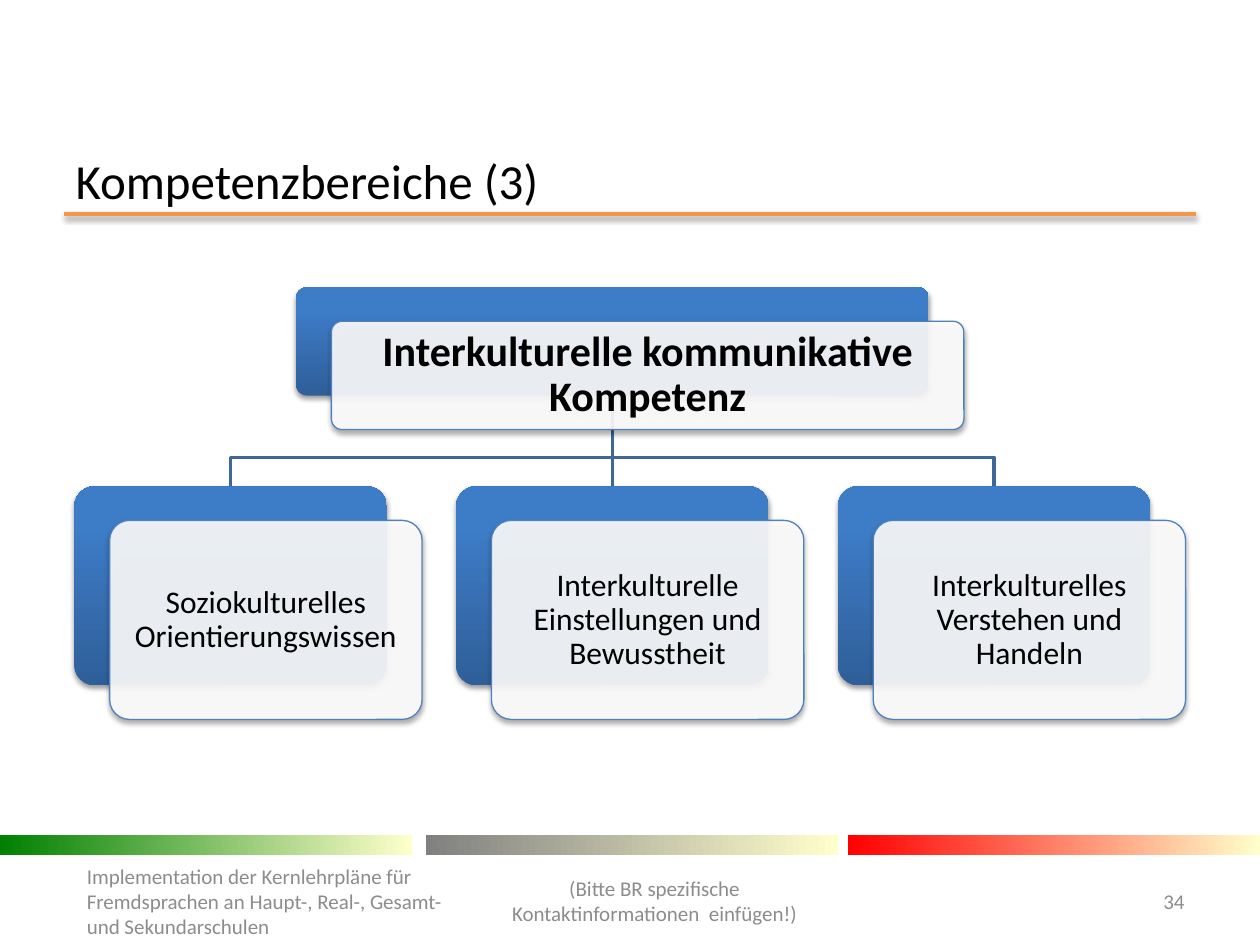
from dataclasses import dataclass

from lxml import etree
from pptx import Presentation
from pptx.dml.color import RGBColor
from pptx.enum.shapes import MSO_CONNECTOR, MSO_SHAPE
from pptx.enum.text import MSO_ANCHOR, MSO_AUTO_SIZE, PP_ALIGN
from pptx.oxml.ns import qn
from pptx.util import Inches, Pt

LEFT, CENTER, RIGHT = PP_ALIGN.LEFT, PP_ALIGN.CENTER, PP_ALIGN.RIGHT
MIDDLE = MSO_ANCHOR.MIDDLE
RECT, ROUNDED = MSO_SHAPE.RECTANGLE, MSO_SHAPE.ROUNDED_RECTANGLE
STRAIGHT = MSO_CONNECTOR.STRAIGHT
TITLE_ONLY = 5


@dataclass(frozen=True)
class Theme:
    font: str = "Calibri"
    text: str = "000000"
    muted: str = "8C8C8C"
    rule: str = "F79646"
    branch: str = "3F6797"
    card_line: str = "4F81BD"
    card_fill: str = "FFFFFF"
    card_opacity: int = 90
    back_bottom: str = "2F5F99"
    back_top: str = "3D7CC7"
    band_end: str = "FFFFCC"
    bands: tuple = ("008000", "808080", "FF0000")
    title_size: int = 28
    root_size: int = 24
    area_size: int = 18
    footer_size: int = 12


@dataclass(frozen=True)
class Box:
    left: float
    top: float
    width: float
    height: float

    def emu(self) -> tuple:
        return tuple(Inches(v) for v in (self.left, self.top, self.width, self.height))

    def shifted(self, dx: float, dy: float) -> "Box":
        return Box(self.left + dx, self.top + dy, self.width, self.height)

    @property
    def center(self) -> float:
        return self.left + self.width / 2

    @property
    def bottom(self) -> float:
        return self.top + self.height


@dataclass(frozen=True)
class Card:
    text: str
    box: Box
    size: int
    inset: float
    bold: bool = False


@dataclass(frozen=True)
class Footer:
    text: str
    box: Box
    align: PP_ALIGN


THEME = Theme()
CARD_OFFSET = (0.28, 0.27)
AREA_LEFT, AREA_TOP, AREA_STEP = 0.59, 3.86, 3.03
JUNCTION_Y = 3.63
BAND_LEFTS = (0, 3.38, 6.73)

ROOT = Card("Interkulturelle kommunikative Kompetenz",
            Box(2.35, 2.28, 5.02, 0.86), THEME.root_size, 0.1, True)
AREAS = [
    Card(text, Box(AREA_LEFT + i * AREA_STEP, AREA_TOP, 2.48, 1.58), THEME.area_size, 0.07)
    for i, text in enumerate((
        "Soziokulturelles Orientierungswissen",
        "Interkulturelle Einstellungen und Bewusstheit",
        "Interkulturelles Verstehen und Handeln",
    ))
]
FOOTERS = (
    Footer("Implementation der Kernlehrpläne für Fremdsprachen an Haupt-, Real-, "
           "Gesamt- und Sekundarschulen", Box(0.59, 6.81, 3.15, 0.68), LEFT),
    Footer("(Bitte BR spezifische Kontaktinformationen  einfügen!)",
           Box(3.74, 6.79, 2.91, 0.71), CENTER),
    Footer("34", Box(8.86, 6.95, 0.64, 0.4), RIGHT),
)


def rgb(color: str) -> RGBColor:
    return RGBColor.from_string(color)


def write(frame, text: str, size: int, color: str, align, bold=False, spacing=1.0, **margins) -> None:
    frame.text = text
    paragraph = frame.paragraphs[0]
    formats = (
        (frame, {"word_wrap": True, "auto_size": MSO_AUTO_SIZE.NONE,
                 "vertical_anchor": MIDDLE, **margins}),
        (paragraph, {"alignment": align, "line_spacing": spacing}),
        (paragraph.runs[0].font, {"name": THEME.font, "size": Pt(size), "bold": bold}),
    )
    for target, values in formats:
        for name, value in values.items():
            setattr(target, name, value)
    paragraph.runs[0].font.color.rgb = rgb(color)


def set_line(line, color: str, width: float) -> None:
    line.color.rgb = rgb(color)
    line.width = Pt(width)


def set_gradient(fill, start: str, end: str, angle: int, end_position: float = 1.0) -> None:
    fill.gradient()
    fill.gradient_angle = angle
    for stop, color, position in zip(fill.gradient_stops, (start, end), (0.0, end_position)):
        stop.color.rgb = rgb(color)
        stop.position = position


def set_effects(shape, opacity: int = 0, distance: float = 1.6) -> None:
    """Replace inherited effects with a downward shadow, or with none at zero opacity."""
    properties = shape._element.spPr
    for old in properties.findall(qn("a:effectLst")):
        properties.remove(old)
    effects = etree.SubElement(properties, qn("a:effectLst"))
    if opacity:
        shadow = etree.SubElement(effects, qn("a:outerShdw"), blurRad=str(Pt(3.1)),
                                  dist=str(Pt(distance)), dir="5400000", rotWithShape="0")
        color = etree.SubElement(shadow, qn("a:srgbClr"), val="000000")
        etree.SubElement(color, qn("a:alpha"), val=str(opacity * 1000))


def add_straight(shapes, start: tuple, end: tuple, color: str):
    connector = shapes.add_connector(STRAIGHT, *(Inches(v) for v in start + end))
    set_line(connector.line, color, 2)
    set_effects(connector)
    return connector


def add_branch(shapes, parent: Box, child: Box) -> None:
    start, end = (parent.center, parent.bottom), (child.center, child.top)
    if abs(start[0] - end[0]) < 0.05:
        add_straight(shapes, start, (start[0], end[1]), THEME.branch)
        return
    points = [(Inches(x), Inches(y)) for x, y in
              (start, (start[0], JUNCTION_Y), (end[0], JUNCTION_Y), end)]
    builder = shapes.build_freeform(*points[0])
    builder.add_line_segments(points[1:], close=False)
    branch = builder.convert_to_shape()
    branch.fill.background()
    set_line(branch.line, THEME.branch, 2)
    set_effects(branch)


def add_card(shapes, card: Card) -> None:
    back = shapes.add_shape(ROUNDED, *card.box.emu())
    set_gradient(back.fill, THEME.back_bottom, THEME.back_top, 90, 0.8)
    back.line.fill.background()
    set_effects(back, 38)

    front = shapes.add_shape(ROUNDED, *card.box.shifted(*CARD_OFFSET).emu())
    front.fill.solid()
    front.fill.fore_color.rgb = rgb(THEME.card_fill)
    fill_color = front._element.spPr.find(qn("a:solidFill")).find(qn("a:srgbClr"))
    etree.SubElement(fill_color, qn("a:alpha"), val=str(THEME.card_opacity * 1000))
    set_line(front.line, THEME.card_line, 0.75)
    set_effects(front, 35, 1.8)
    for shape in (back, front):
        shape.adjustments[0] = 0.1
    sides = ("margin_left", "margin_top", "margin_right", "margin_bottom")
    write(front.text_frame, card.text, card.size, THEME.text, CENTER, card.bold, 0.9,
          **dict.fromkeys(sides, Inches(card.inset)))


def add_band(shapes, left: float, color: str) -> None:
    band = shapes.add_shape(RECT, *Box(left, 6.63, 3.27, 0.16).emu())
    set_gradient(band.fill, color, THEME.band_end, 0)
    band.line.fill.background()
    set_effects(band)


def main() -> None:
    deck = Presentation()
    deck.slide_width, deck.slide_height = Inches(10), Inches(7.5)
    slide = deck.slides.add_slide(deck.slide_layouts[TITLE_ONLY])
    shapes = slide.shapes

    title = shapes.title
    title.left, title.top, title.width, title.height = Box(0.5, 1.23, 9, 0.39).emu()
    write(title.text_frame, "Kompetenzbereiche (3)", THEME.title_size, THEME.text, LEFT)
    set_effects(add_straight(shapes, (0.51, 1.7), (9.49, 1.7), THEME.rule), 38)

    for left, color in zip(BAND_LEFTS, THEME.bands):
        add_band(shapes, left, color)
    for area in AREAS:
        add_branch(shapes, ROOT.box, area.box)
    for card in (ROOT, *AREAS):
        add_card(shapes, card)
    for footer in FOOTERS:
        label = shapes.add_textbox(*footer.box.emu())
        write(label.text_frame, footer.text, THEME.footer_size, THEME.muted, footer.align)

    deck.save("out.pptx")


if __name__ == "__main__":
    main()
